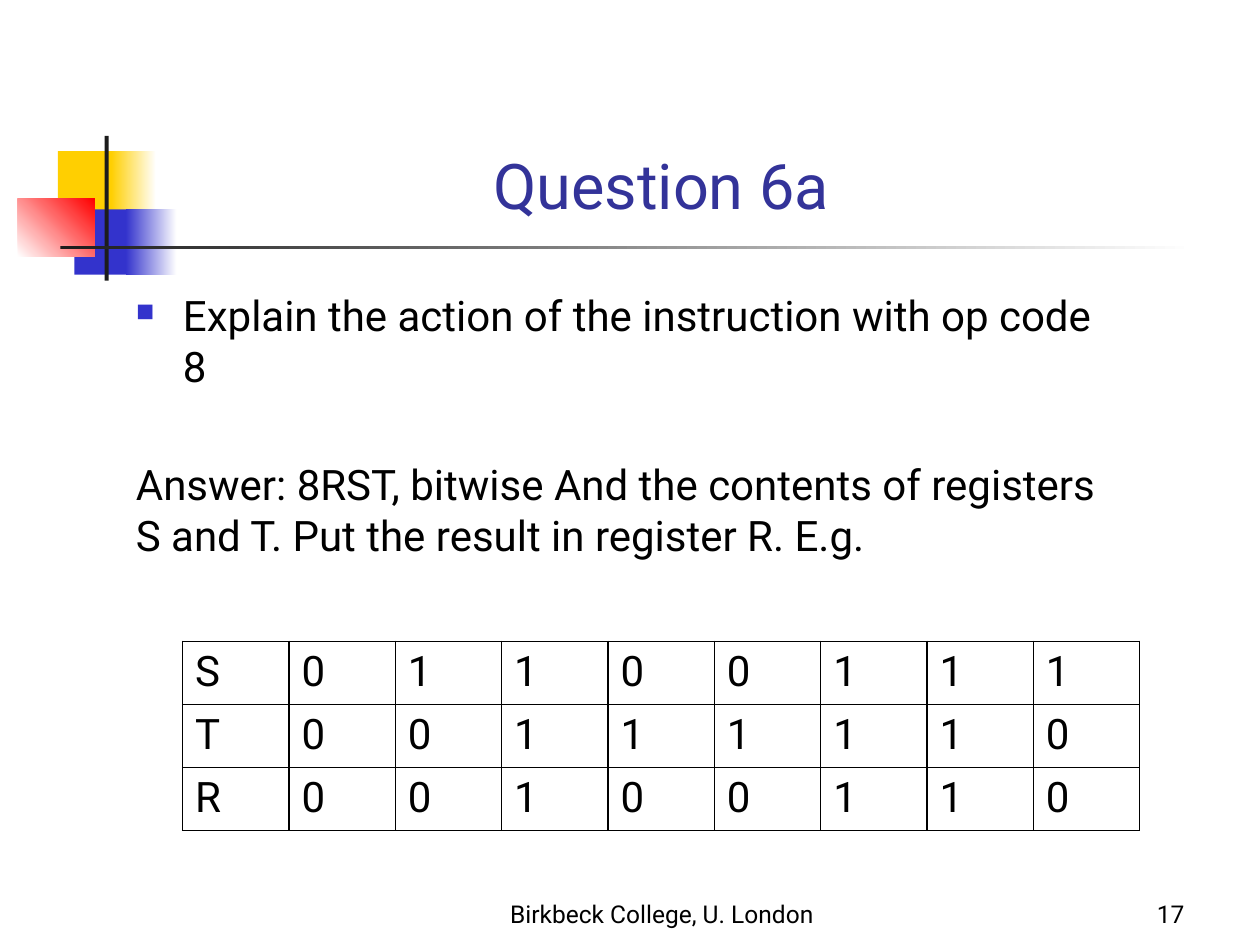
from dataclasses import dataclass
from typing import Any

from lxml import etree
from pptx import Presentation
from pptx import util as u
from pptx.dml.color import RGBColor
from pptx.enum import shapes, text
from pptx.oxml import ns


@dataclass(frozen=True)
class Theme:
    font: str = "Roboto"
    title: str = "333399"
    ink: str = "000000"
    paper: str = "FFFFFF"
    gold: str = "FFCF01"
    blue: str = "3333CC"
    red: str = "FF0000"
    dark: str = "1C1C1C"
    head: int = 36
    body: int = 24
    foot: int = 14


def place(*nums):
    return [u.Cm(n) for n in nums]


def put(obj, vals):
    for key, val in vals.items():
        setattr(obj, key, val)


@dataclass
class Deck:
    look: Theme
    slide: Any

    def style(self, para, words, size, color, **form):
        run = para.add_run()
        run.text = words
        put(run.font, {"name": self.look.font, "size": u.Pt(size)})
        run.font.color.rgb = RGBColor.from_string(color)
        put(para, form)

    def block(self, box, *tints, angle=0):
        """Rectangle with one plain tint, or a gradient between two."""
        shape = self.slide.shapes.add_shape(
            shapes.MSO_SHAPE.RECTANGLE, *place(*box))
        shape.shadow.inherit = False
        shape.line.fill.background()
        fill = shape.fill
        if len(tints) == 1:
            fill.solid()
            fill.fore_color.rgb = RGBColor.from_string(tints[0])
            return
        fill.gradient()
        fill.gradient_angle = angle
        for stop, tint, pos in zip(fill.gradient_stops, tints, (0, 1)):
            stop.color.rgb = RGBColor.from_string(tint)
            stop.position = pos

    def frame(self, box, anchor=text.MSO_ANCHOR.BOTTOM):
        frame = self.slide.shapes.add_textbox(*place(*box)).text_frame
        put(frame, {"word_wrap": True, "vertical_anchor": anchor})
        return frame

    def label(self, box, words, size, color, align):
        para = self.frame(box).paragraphs[0]
        self.style(para, words, size, color, alignment=align)

    def bullet(self, para, mark, color, scale, indent):
        props = para._p.get_or_add_pPr()
        props.set("marL", str(u.Cm(indent)))
        props.set("indent", str(-u.Cm(indent)))
        tint = etree.SubElement(props, ns.qn("a:buClr"))
        etree.SubElement(tint, ns.qn("a:srgbClr"), val=color)
        etree.SubElement(props, ns.qn("a:buSzPct"), val=str(scale * 1000))
        etree.SubElement(props, ns.qn("a:buChar"), char=mark)

    def border(self, cell):
        props = cell._tc.get_or_add_tcPr()
        for side in "LRTB":
            line = etree.SubElement(props, ns.qn("a:ln" + side),
                                    w=str(u.Pt(1)))
            fill = etree.SubElement(line, ns.qn("a:solidFill"))
            etree.SubElement(fill, ns.qn("a:srgbClr"), val=self.look.ink)

    def table(self, left, top, width, high, rows):
        count = len(rows[0])
        grid = self.slide.shapes.add_table(
            len(rows), count,
            *place(left, top, width, high * len(rows))).table
        put(grid, {"first_row": False, "horz_banding": False})
        for col in grid.columns:
            col.width = u.Cm(width / count)
        for r, row in enumerate(rows):
            for c, words in enumerate(row):
                cell = grid.cell(r, c)
                self.border(cell)
                cell.fill.solid()
                cell.fill.fore_color.rgb = RGBColor.from_string(
                    self.look.paper)
                self.style(cell.text_frame.paragraphs[0], words,
                           self.look.body, self.look.ink)


def main():
    prs = Presentation()
    put(prs, {"slide_width": u.Cm(25.4), "slide_height": u.Cm(19.05)})
    look = Theme()
    deck = Deck(look, prs.slides.add_slide(prs.slide_layouts[6]))
    align = text.PP_ALIGN

    # Corner blocks and rules
    deck.block((1.17, 3.05, 1.22, 1.32), look.gold)
    deck.block((2.24, 3.05, 0.91, 1.32), look.gold, look.paper)
    deck.block((1.5, 4.22, 1.17, 1.32), look.blue)
    deck.block((2.54, 4.22, 1.02, 1.32), look.blue, look.paper)
    deck.block((0.36, 4.01, 1.55, 1.17), look.paper, look.red, angle=45)
    deck.block((2.11, 2.74, 0.08, 2.92), look.dark)
    deck.block((1.22, 4.95, 22.86, 0.08), look.dark, look.paper)

    # Title
    deck.label((2.51, 1.42, 21.64, 3.18), "Question 6a",
               look.head, look.title, align.CENTER)

    # Question and answer
    body = deck.frame((2.49, 5.72, 20.4, 6.4), text.MSO_ANCHOR.TOP)
    ask = body.paragraphs[0]
    deck.style(ask, "Explain the action of the instruction with op code 8",
               look.body, look.ink)
    deck.bullet(ask, "■", look.blue, 60, 0.95)
    deck.style(body.add_paragraph(),
               "Answer: 8RST, bitwise And the contents of registers S and T. "
               "Put the result in register R. E.g.",
               look.body, look.ink, space_before=u.Pt(39))

    # Register bits
    deck.table(3.68, 12.93, 19.3, 1.25,
               ["S01100111", "T00111110", "R00100110"])

    # Footer
    deck.label((9.32, 17.58, 8.05, 1.27), "Birkbeck College, U. London",
               look.foot, look.ink, align.CENTER)
    deck.label((18.85, 17.58, 5.28, 1.27), "17",
               look.foot, look.ink, align.RIGHT)

    prs.save("out.pptx")


if __name__ == "__main__":
    main()
